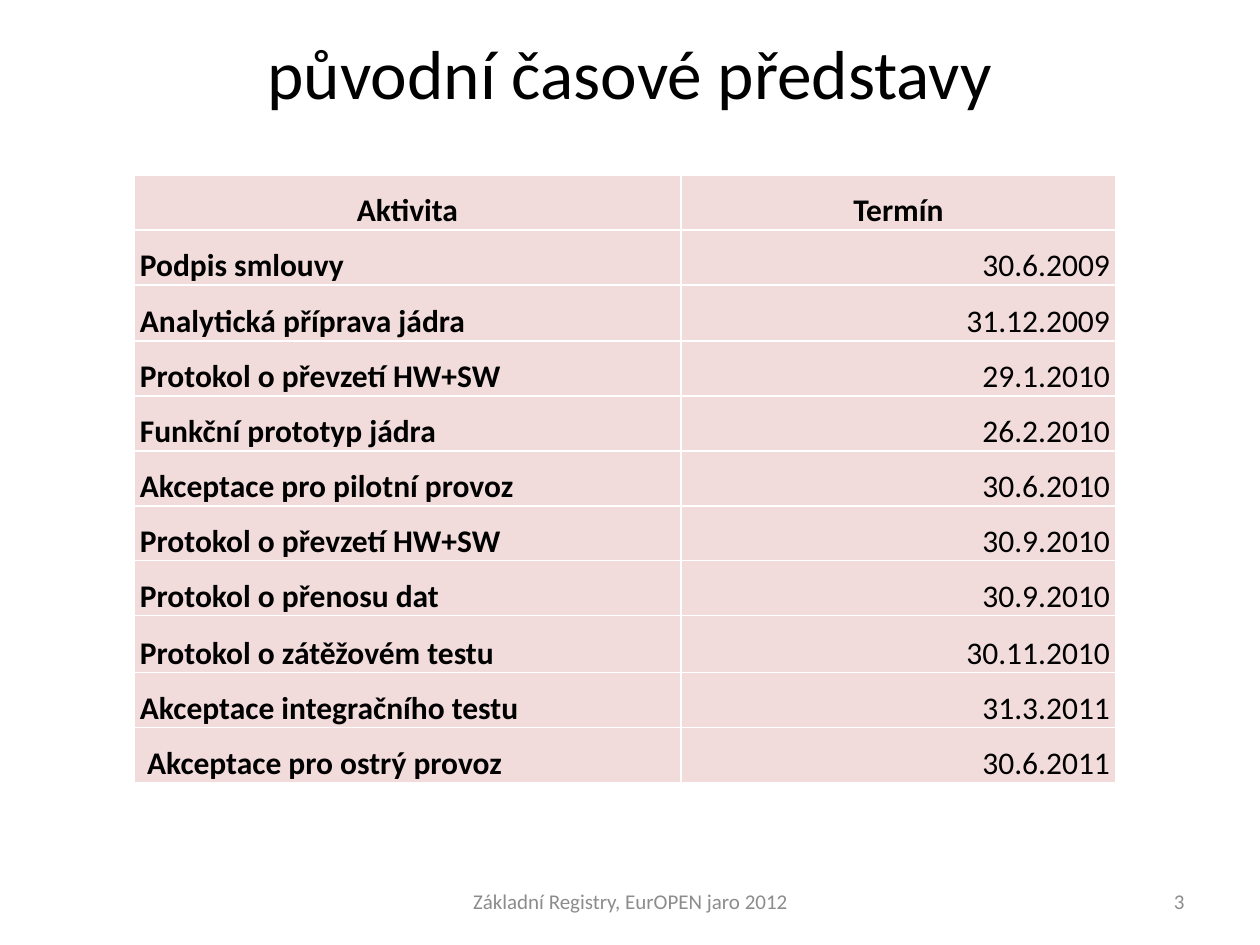
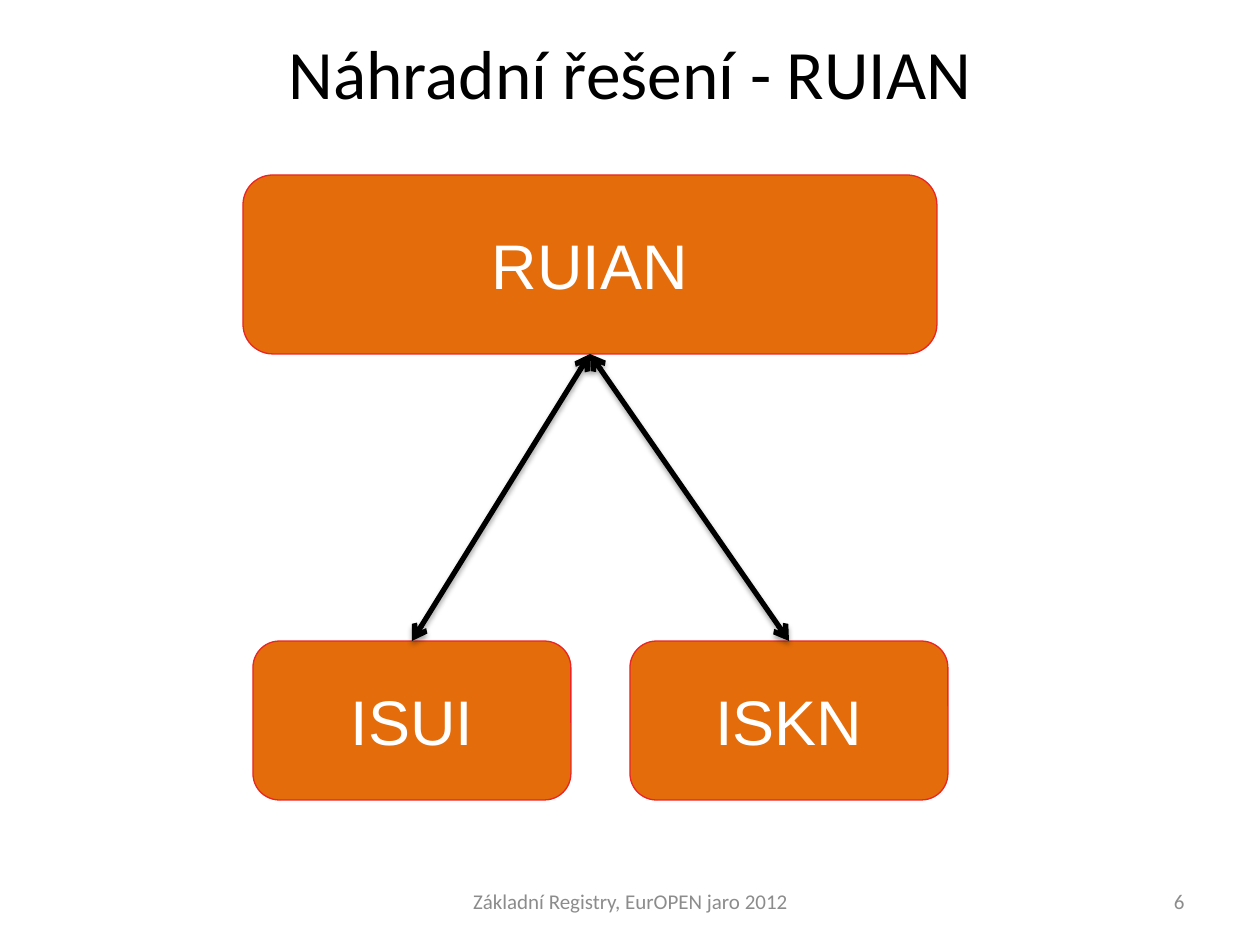
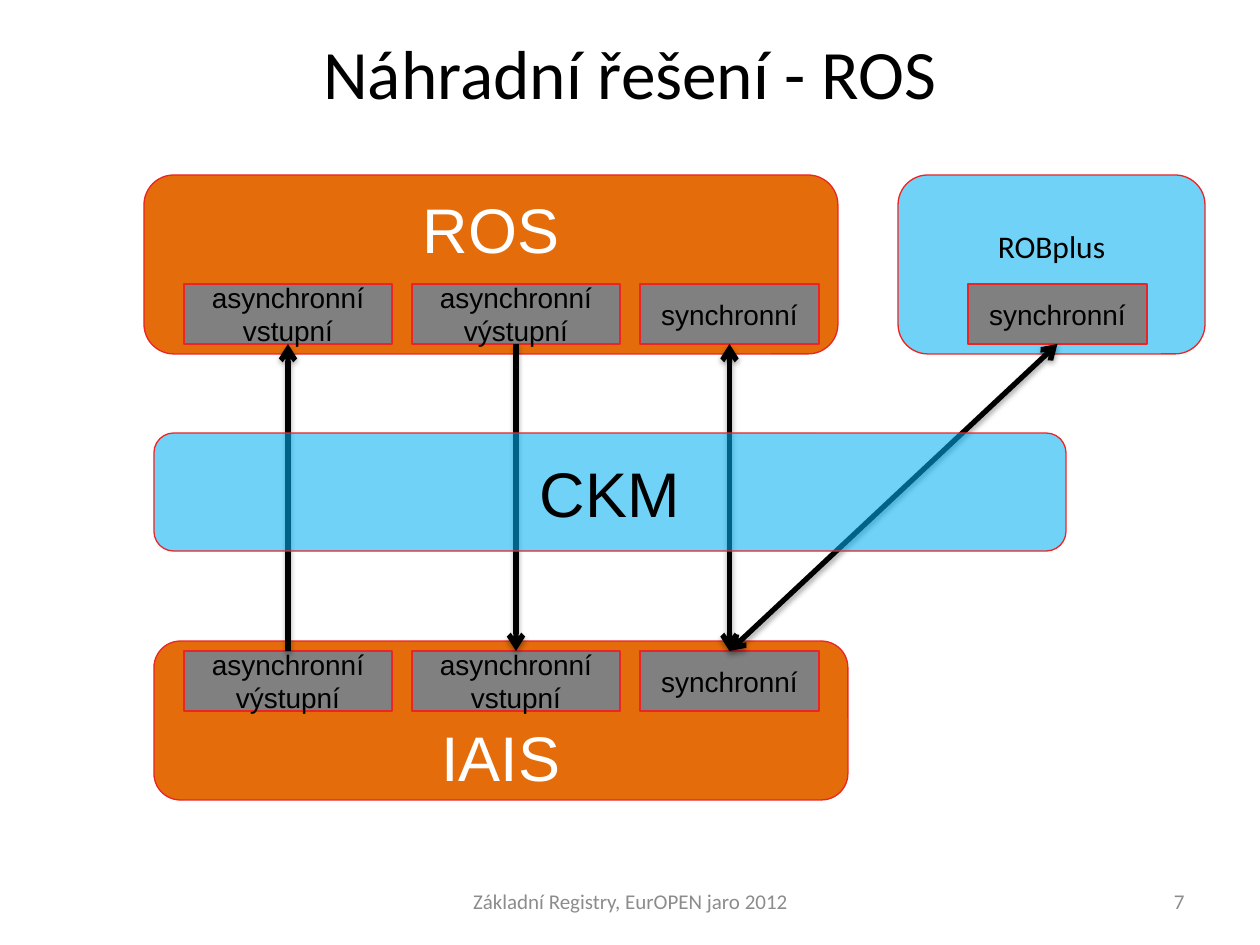
from dataclasses import dataclass

from lxml import etree
from pptx import Presentation
from pptx import util as u
from pptx.dml.color import RGBColor
from pptx.enum import shapes, text
from pptx.oxml.ns import qn

PX_PER_INCH = 126
COLORS = {
    "black": "000000", "white": "FFFFFF", "footer": "8C8C8C", "cell": "F2DCDB",
    "register": "E46C0A", "hub": "00B0F0", "port": "808080", "outline": "EB2525",
}
FONTS = {
    "title": {"name": "Calibri", "size": u.Pt(39.6), "bold": False},
    "footer": {"name": "Calibri", "size": u.Pt(12), "bold": False},
    "head": {"name": "Calibri", "size": u.Pt(18), "bold": True},
    "cell": {"name": "Calibri", "size": u.Pt(18), "bold": False},
    "system": {"name": "Arial", "size": u.Pt(36), "bold": False},
    "port": {"name": "Arial", "size": u.Pt(16), "bold": False},
}
LEFT, CENTER, RIGHT = text.PP_ALIGN.LEFT, text.PP_ALIGN.CENTER, text.PP_ALIGN.RIGHT
TOP_SIDE, BOTTOM_SIDE = 0, 2
INSET = 6

FOOTER = "Základní Registry, EurOPEN jaro 2012"
SCHEDULE = [
    ("Aktivita", "Termín"),
    ("Podpis smlouvy", "30.6.2009"),
    ("Analytická příprava jádra", "31.12.2009"),
    ("Protokol o převzetí HW+SW", "29.1.2010"),
    ("Funkční prototyp jádra", "26.2.2010"),
    ("Akceptace pro pilotní provoz", "30.6.2010"),
    ("Protokol o převzetí HW+SW", "30.9.2010"),
    ("Protokol o přenosu dat", "30.9.2010"),
    ("Protokol o zátěžovém testu", "30.11.2010"),
    ("Akceptace integračního testu", "31.3.2011"),
    (" Akceptace pro ostrý provoz", "30.6.2011"),
]
COLUMN_WIDTHS = (547, 435)
ROW_HEIGHT = 55
TALL_ROWS = {2: 56, 8: 57}

UPPER_TOP, UPPER_HEIGHT = 175, 179
LOWER_TOP, LOWER_HEIGHT = 641, 159
PORT_LEFT, PORT_STEP, PORT_HEIGHT = 184, 228, 60
ASYNC_WIDTH, SYNC_WIDTH = 208, 179


@dataclass
class Box:
    label: str
    left: int
    top: int
    width: int
    height: int
    fill: str = "register"
    color: str = "white"
    font: str = "system"
    rounded: bool = True
    opacity: int = 100
    top_inset: int = INSET
    bottom_inset: int = INSET


def px(length: float) -> u.Emu:
    return u.Emu(round(length * u.Inches(1) / PX_PER_INCH))


def rgb(color: str) -> RGBColor:
    return RGBColor.from_string(COLORS[color])


def write(frame, content: str, font: str, color: str, align=CENTER) -> None:
    """Fill a text frame, one paragraph for each line of content."""
    for index, line in enumerate(content.split("\n")):
        para = frame.add_paragraph() if index else frame.paragraphs[0]
        para.alignment = align
        span = para.add_run()
        span.text = line
        for name, value in FONTS[font].items():
            setattr(span.font, name, value)
        span.font.color.rgb = rgb(color)


def place(shape, left: int, top: int, width: int, height: int) -> None:
    for name, value in zip(("left", "top", "width", "height"), (left, top, width, height)):
        setattr(shape, name, px(value))


def add_page(deck, title: str, number: int):
    """Add a slide with the shared title, footer and page number."""
    page = deck.slides.add_slide(deck.slide_layouts[5])
    heading = page.shapes.title
    place(heading, 63, 38, 1134, 68)
    heading.text_frame.auto_size = text.MSO_AUTO_SIZE.NONE
    heading.text_frame.vertical_anchor = text.MSO_ANCHOR.MIDDLE
    write(heading.text_frame, title, "title", "black")
    for content, left, width, align in ((FOOTER, 431, 399, CENTER), (str(number), 903, 294, RIGHT)):
        note = page.shapes.add_textbox(px(left), px(876), px(width), px(50))
        note.text_frame.word_wrap = True
        note.text_frame.vertical_anchor = text.MSO_ANCHOR.MIDDLE
        write(note.text_frame, content, "footer", "footer", align)
    return page


def add_box(page, box: Box):
    kind = shapes.MSO_SHAPE.ROUNDED_RECTANGLE if box.rounded else shapes.MSO_SHAPE.RECTANGLE
    shape = page.shapes.add_shape(kind, px(box.left), px(box.top), px(box.width), px(box.height))
    shape.shadow.inherit = False
    shape.fill.solid()
    shape.fill.fore_color.rgb = rgb(box.fill)
    if box.opacity < 100:
        tint = shape.element.spPr.find(qn("a:solidFill")).find(qn("a:srgbClr"))
        etree.SubElement(tint, qn("a:alpha"), val=str(box.opacity * 1000))
    shape.line.color.rgb = rgb("outline")
    shape.line.width = u.Pt(0.75)
    layout = {
        "word_wrap": False, "vertical_anchor": text.MSO_ANCHOR.MIDDLE,
        "margin_top": px(box.top_inset), "margin_bottom": px(box.bottom_inset),
    }
    for name, value in layout.items():
        setattr(shape.text_frame, name, value)
    write(shape.text_frame, box.label, box.font, box.color)
    return shape


def add_port(page, label: str, left: int, top: int, width: int):
    return add_box(page, Box(label, left, top, width, PORT_HEIGHT, "port", "black", "port", False))


def add_arrow(page, start, start_side: int, end, end_side: int, both: bool = True) -> None:
    """Join two boxes by a shadowed arrow, with a head at one end or both."""
    arrow = page.shapes.add_connector(shapes.MSO_CONNECTOR.STRAIGHT, 0, 0, 0, 0)
    arrow.begin_connect(start, start_side)
    arrow.end_connect(end, end_side)
    arrow.line.color.rgb = rgb("black")
    arrow.line.width = u.Pt(3)
    properties = arrow.element.spPr
    line = properties.find(qn("a:ln"))
    for tag in ("a:headEnd", "a:tailEnd") if both else ("a:tailEnd",):
        etree.SubElement(line, qn(tag), type="arrow")
    effects = etree.SubElement(properties, qn("a:effectLst"))
    shadow = etree.SubElement(effects, qn("a:outerShdw"), blurRad=str(u.Pt(3.1)),
                              dist=str(u.Pt(1.8)), dir="5400000", rotWithShape="0")
    tint = etree.SubElement(shadow, qn("a:srgbClr"), val=COLORS["black"])
    etree.SubElement(tint, qn("a:alpha"), val="35000")


def build_schedule(deck) -> None:
    page = add_page(deck, "původní časové představy", 3)
    heights = [TALL_ROWS.get(index, ROW_HEIGHT) for index in range(len(SCHEDULE))]
    table = page.shapes.add_table(len(SCHEDULE), len(COLUMN_WIDTHS), px(134), px(175),
                                  px(sum(COLUMN_WIDTHS)), px(sum(heights))).table
    table.horz_banding = False
    for column, width in zip(table.columns, COLUMN_WIDTHS):
        column.width = px(width)
    layout = {
        "margin_left": px(INSET), "margin_right": px(INSET), "margin_top": 0,
        "margin_bottom": 0, "vertical_anchor": text.MSO_ANCHOR.BOTTOM,
    }
    for row, entries in enumerate(SCHEDULE):
        table.rows[row].height = px(heights[row])
        for column, content in enumerate(entries):
            cell = table.cell(row, column)
            for name, value in layout.items():
                setattr(cell, name, value)
            cell.fill.solid()
            cell.fill.fore_color.rgb = rgb("cell")
            font = "head" if row == 0 or column == 0 else "cell"
            align = CENTER if row == 0 else (LEFT, RIGHT)[column]
            write(cell.text_frame, content, font, "black", align)


def build_ruian(deck) -> None:
    page = add_page(deck, "Náhradní řešení - RUIAN", 6)
    ruian = add_box(page, Box("RUIAN", 243, UPPER_TOP, 694, UPPER_HEIGHT))
    for label, left in (("ISUI", 253), ("ISKN", 630)):
        source = add_box(page, Box(label, left, LOWER_TOP, 318, LOWER_HEIGHT))
        add_arrow(page, source, TOP_SIDE, ruian, BOTTOM_SIDE)


def build_ros(deck) -> None:
    page = add_page(deck, "Náhradní řešení - ROS", 7)
    for box in (
        Box("ROS", 144, UPPER_TOP, 694, UPPER_HEIGHT, bottom_inset=78),
        Box("IAIS", 154, LOWER_TOP, 694, LOWER_HEIGHT, top_inset=78),
        Box("ROBplus", 898, UPPER_TOP, 307, UPPER_HEIGHT, "hub", "black", "cell",
            opacity=56, bottom_inset=44),
    ):
        add_box(page, box)

    incoming, outgoing, direct = "asynchronní\nvstupní", "asynchronní\nvýstupní", "synchronní"
    widths = (ASYNC_WIDTH, ASYNC_WIDTH, SYNC_WIDTH)
    ros_ports, iais_ports = (
        [add_port(page, label, PORT_LEFT + index * PORT_STEP, top, width)
         for index, (label, width) in enumerate(zip(labels, widths))]
        for top, labels in ((284, (incoming, outgoing, direct)),
                            (651, (outgoing, incoming, direct)))
    )
    robplus_port = add_port(page, direct, 968, 284, SYNC_WIDTH)

    add_arrow(page, iais_ports[2], TOP_SIDE, robplus_port, BOTTOM_SIDE)
    add_arrow(page, iais_ports[0], TOP_SIDE, ros_ports[0], BOTTOM_SIDE, both=False)
    add_arrow(page, ros_ports[2], BOTTOM_SIDE, iais_ports[2], TOP_SIDE)
    add_arrow(page, ros_ports[1], BOTTOM_SIDE, iais_ports[1], TOP_SIDE, both=False)
    add_box(page, Box("CKM", 154, 433, 912, 118, "hub", "black", opacity=56))


def main() -> None:
    deck = Presentation()
    deck.slide_width, deck.slide_height = px(1260), px(945)
    for build in (build_schedule, build_ruian, build_ros):
        build(deck)
    deck.save("out.pptx")


if __name__ == "__main__":
    main()
